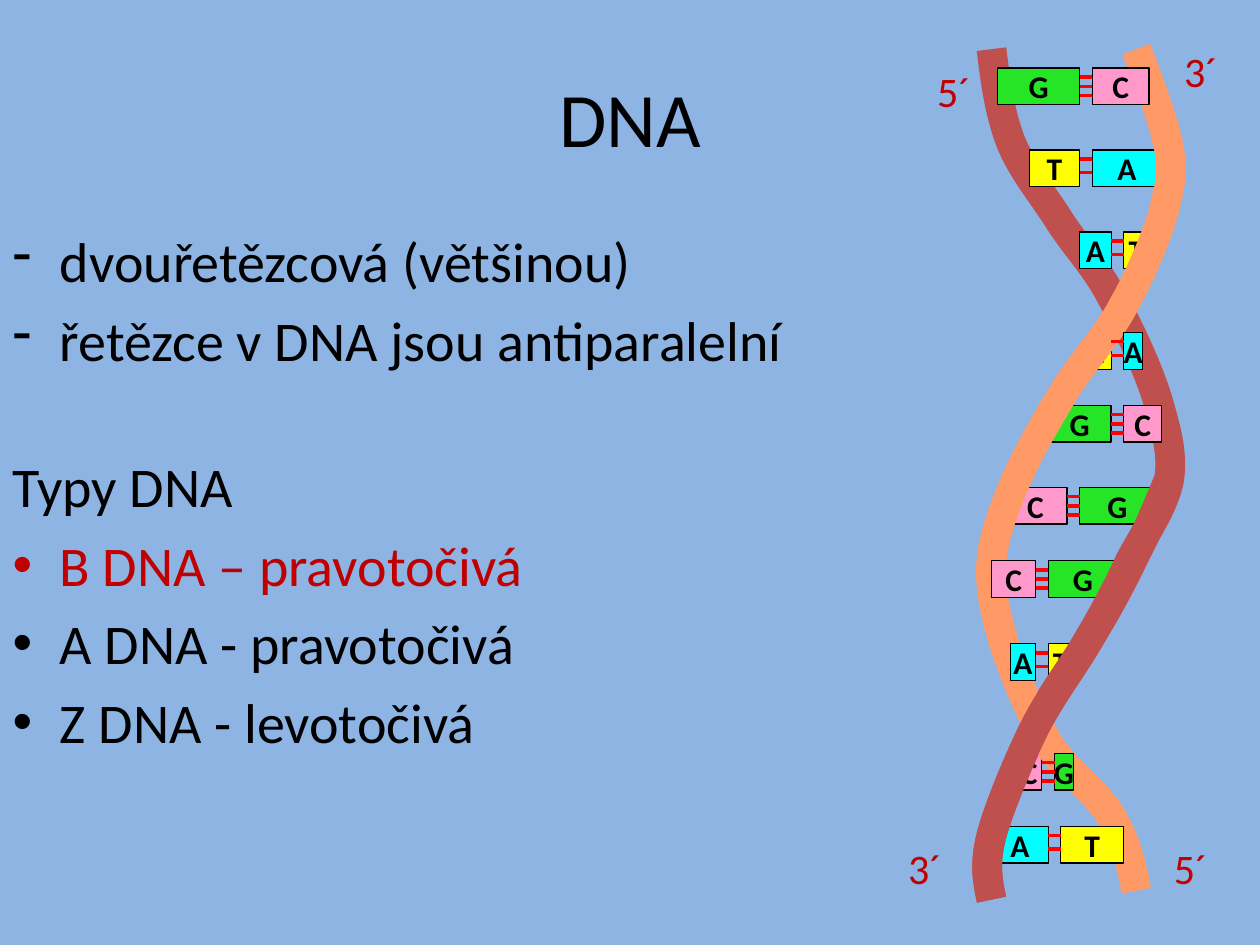
from lxml.etree import SubElement
from pptx import Presentation
from pptx.dml.color import RGBColor
from pptx.enum.shapes import MSO_CONNECTOR, MSO_SHAPE
from pptx.enum.text import MSO_ANCHOR, MSO_AUTO_SIZE, PP_ALIGN
from pptx.oxml.ns import qn
from pptx.util import Pt

COLORS = {
    "background": "8EB4E3", "text": "000000", "accent": "C00000", "bond": "FF0000",
    "red strand": "C0504D", "orange strand": "FF9966",
    "A": "00FFFF", "T": "FFFF00", "G": "26E426", "C": "FF99CC",
}
RGB = {name: RGBColor.from_string(value) for name, value in COLORS.items()}
BOX_H, GAP = 20.9, 7.2

# (top, left base, width, right base, width, start of the bonds, sides behind the strands)
RUNGS = [
    (38.9, "G", 46.8, "C", 32.4, 617, ""),
    (85.7, "T", 28.8, "A", 39.6, 617, "R"),
    (132.5, "A", 18, "T", 14.4, 635, "R"),
    (190.1, "T", 10.8, "A", 10.8, 635, "L"),
    (231.8, "G", 36, "C", 21.6, 635, "L"),
    (278.6, "C", 36, "G", 43.2, 609.8, "LR"),
    (320.4, "C", 25.2, "G", 39.6, 591.8, "R"),
    (367.9, "A", 14.4, "T", 14.4, 591.8, "R"),
    (430.6, "C", 14.4, "G", 10.8, 595.4, "L"),
    (472.3, "A", 32.4, "T", 36, 599, "L"),
]

# Start point, then two control points and an end point for each curve
STRANDS = [
    ("red strand", [
        (566.6, 28.1),
        (568.8, 46.1), (571, 63.4), (577.4, 80.6),
        (583.9, 97.2), (596.9, 112.3), (606.2, 127.4),
        (616.3, 142.6), (626.4, 152.6), (635, 169.2),
        (644.4, 185.8), (655.2, 208.8), (661, 226.8),
        (666, 244.1), (670.3, 257.8), (668.2, 273.6),
        (665.3, 289.4), (653.8, 305.3), (645.8, 320.4),
        (638.6, 336.2), (630, 352.1), (620.6, 367.9),
        (612, 383), (601.2, 396), (591.8, 414.7),
        (583.2, 432.7), (571, 460.8), (566.6, 477.4),
        (562.3, 493.9), (564.5, 504), (566.6, 514.1)]),
    ("orange strand", [
        (649.4, 28.1),
        (657.4, 49), (665.3, 69.8), (668.2, 85.7),
        (670.3, 101.5), (668.2, 107.3), (664.6, 122.4),
        (660.2, 136.8), (651.6, 157.7), (642.2, 174.2),
        (633.6, 190.8), (620.6, 204.5), (609.8, 221),
        (599.8, 237.6), (588.2, 257), (581, 273.6),
        (573.8, 290.2), (568.1, 305.3), (566.6, 320.4),
        (565.2, 336.2), (568.8, 349.9), (573.8, 367.9),
        (579.6, 385.2), (589, 408.2), (599, 424.8),
        (609.8, 441.4), (627.1, 452.9), (635, 466.6),
        (643.7, 481), (646.6, 494.6), (649.4, 509)]),
    ("red strand", [
        (566.6, 514.1),
        (564.5, 504), (562.3, 493.9), (566.6, 477.4),
        (571, 460.8), (582.5, 433.4), (591.8, 414.7),
        (601.9, 395.3), (614.9, 378.7), (624.2, 362.2),
        (634.3, 345.6), (642.2, 330.5), (649.4, 315.4),
        (657.4, 300.2), (662.4, 287.3), (668.2, 273.6)]),
]


def write(p, text, size, color="text", bold=False, align=None):
    p.alignment = align
    r = p.add_run()
    r.text = text
    r.font.name = "Calibri"
    r.font.size = Pt(size)
    r.font.bold = bold
    r.font.color.rgb = RGB[color]


def add_bases(helix, boxes, behind):
    """Draw the base boxes lying behind, or in front of, the strands."""
    for i, (top, left, left_w, right, right_w, x, hidden) in enumerate(RUNGS):
        for side, base, start, width in (("L", left, x - left_w, left_w),
                                         ("R", right, x + GAP, right_w)):
            if (side in hidden) != behind:
                continue
            box = helix.add_shape(MSO_SHAPE.RECTANGLE, Pt(start), Pt(top), Pt(width), Pt(BOX_H))
            box.shadow.inherit = False
            box.fill.solid()
            box.fill.fore_color.rgb = RGB[base]
            box.line.color.rgb = RGB["text"]
            box.line.width = Pt(0.75)
            tf = box.text_frame
            tf.word_wrap = False
            tf.vertical_anchor = MSO_ANCHOR.MIDDLE
            write(tf.paragraphs[0], base, 18, bold=True, align=PP_ALIGN.CENTER)
            boxes[i, side] = box


prs = Presentation()
prs.slide_width, prs.slide_height = Pt(720), Pt(540)
s = prs.slides.add_slide(prs.slide_layouts[1])
s.background.fill.solid()
s.background.fill.fore_color.rgb = RGB["background"]

title, body = s.placeholders
title.left, title.top, title.width, title.height = Pt(36), Pt(21.6), Pt(648), Pt(90)
write(title.text_frame.paragraphs[0], "DNA", 44, align=PP_ALIGN.CENTER)

body.left, body.top, body.width, body.height = Pt(0), Pt(126), Pt(684), Pt(356.4)
tf = body.text_frame
for i, (bullet, text, color) in enumerate([
    ("-", "dvouřetězcová (většinou)", "text"),
    ("-", "řetězce v DNA jsou antiparalelní", "text"),
    (None, "Typy DNA", "text"),
    ("•", "B DNA – pravotočivá", "accent"),
    ("•", "A DNA - pravotočivá", "text"),
    ("•", "Z DNA - levotočivá", "text"),
]):
    p = tf.add_paragraph() if i else tf.paragraphs[0]
    write(p, text, 32, color)
    p.space_before = Pt(6.4 if bullet else 45.4)
    pPr = p._p.get_or_add_pPr()
    pPr.set("marL", str(Pt(27)))
    pPr.set("indent", str(Pt(-27)))
    if bullet:
        SubElement(pPr, qn("a:buFontTx"))
        SubElement(pPr, qn("a:buChar")).set("char", bullet)
    else:
        SubElement(pPr, qn("a:buNone"))

helix = s.shapes.add_group_shape().shapes
boxes = {}
add_bases(helix, boxes, behind=True)

for color, points in STRANDS:
    start, *rest = [(Pt(x), Pt(y)) for x, y in points]
    builder = helix.build_freeform(*start)
    builder.add_line_segments(rest, close=False)
    strand = builder.convert_to_shape()
    strand.shadow.inherit = False
    strand.fill.background()
    strand.line.color.rgb = RGB[color]
    strand.line.width = Pt(17)
    # Turn every three straight segments into one Bézier curve
    segments = strand._element.xpath(".//a:lnTo")
    outline = segments[0].getparent()
    for i in range(0, len(segments), 3):
        curve = SubElement(outline, qn("a:cubicBezTo"))
        for segment in segments[i:i + 3]:
            curve.append(segment[0])
            outline.remove(segment)

add_bases(helix, boxes, behind=False)

for i, (top, left, _, _, _, x, _) in enumerate(RUNGS):
    for dy in (5.2, BOX_H / 2, 15.6) if left in "GC" else (5.2, 13):
        y = Pt(top + dy)
        bond = helix.add_connector(MSO_CONNECTOR.STRAIGHT, Pt(x), y, Pt(x + GAP), y)
        bond.line.color.rgb = RGB["bond"]
        bond.line.width = Pt(2)
        SubElement(bond._element.spPr, qn("a:effectLst"))
        if dy == BOX_H / 2:
            bond.begin_connect(boxes[i, "L"], 3)
            bond.end_connect(boxes[i, "R"], 1)

for text, x, y in [("5´", 528.5, 33.8), ("3´", 669.6, 22.3),
                   ("5´", 663.8, 478.1), ("3´", 511.9, 478.1)]:
    tf = s.shapes.add_textbox(Pt(x), Pt(y), Pt(33.8), Pt(36)).text_frame
    tf.word_wrap = False
    tf.auto_size = MSO_AUTO_SIZE.SHAPE_TO_FIT_TEXT
    write(tf.paragraphs[0], text, 24, "accent")

prs.save("out.pptx")
